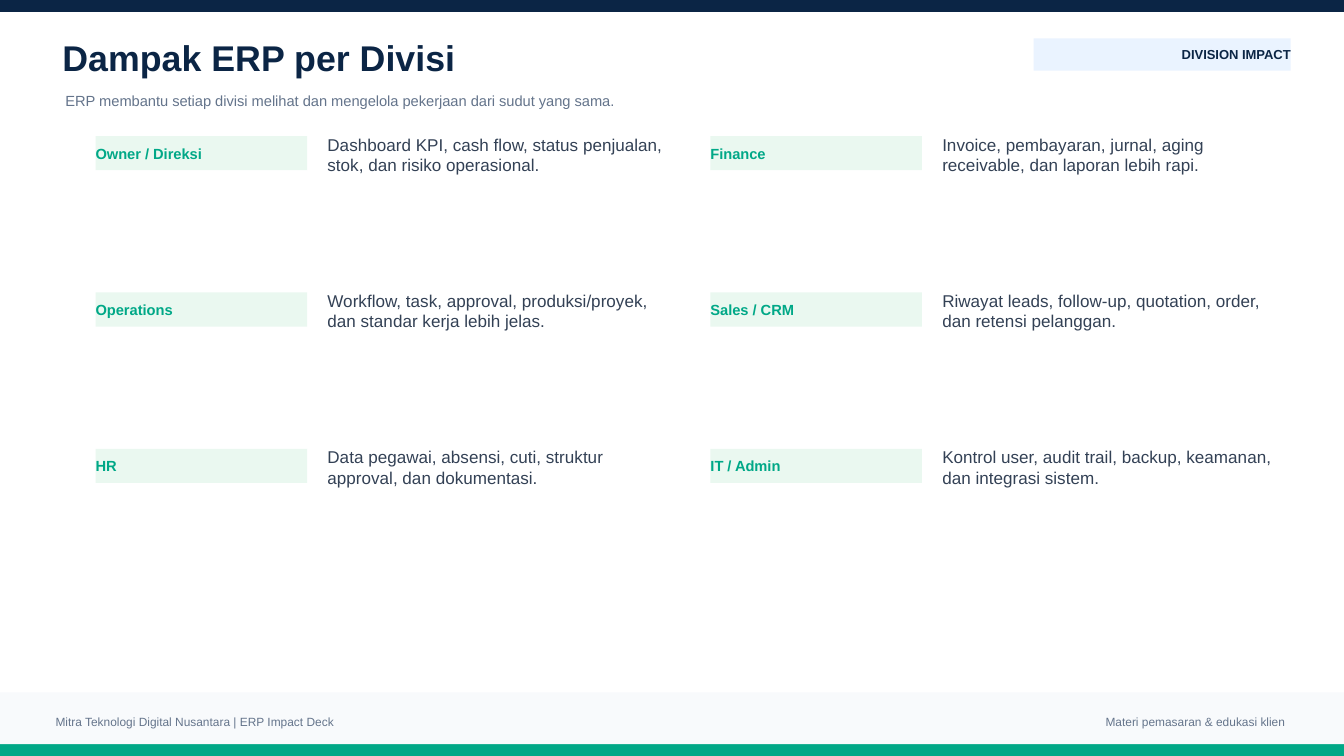
from pptx import Presentation
from pptx import util as u
from pptx.dml.color import RGBColor
from pptx.enum import shapes, text

NAVY = RGBColor(0x0B, 0x25, 0x45)
GREEN = RGBColor(0x00, 0xA8, 0x87)
MINT = RGBColor(0xEA, 0xF8, 0xF0)
SKY = RGBColor(0xEA, 0xF3, 0xFF)
MIST = RGBColor(0xF8, 0xFA, 0xFC)
SLATE = RGBColor(0x64, 0x74, 0x8B)
INK = RGBColor(0x33, 0x41, 0x55)

LEFT, RIGHT = text.PP_ALIGN.LEFT, text.PP_ALIGN.RIGHT
TOP, MIDDLE = text.MSO_ANCHOR.TOP, text.MSO_ANCHOR.MIDDLE

WIDTH, HEIGHT = 33.86, 19.05

DIVISIONS = [
    ("Owner / Direksi", "Dashboard KPI, cash flow, status penjualan, stok, dan risiko operasional."),
    ("Finance", "Invoice, pembayaran, jurnal, aging receivable, dan laporan lebih rapi."),
    ("Operations", "Workflow, task, approval, produksi/proyek, dan standar kerja lebih jelas."),
    ("Sales / CRM", "Riwayat leads, follow-up, quotation, order, dan retensi pelanggan."),
    ("HR", "Data pegawai, absensi, cuti, struktur approval, dan dokumentasi."),
    ("IT / Admin", "Kontrol user, audit trail, backup, keamanan, dan integrasi sistem."),
]


class DivisionPage:
    """Holds the type style and the slide being built; places are in cm."""

    font_name = "Arial"

    def __init__(self, deck):
        self.page = deck.slides.add_slide(deck.slide_layouts[5])

    def set_wording(self, box, wording, size, color, bold=False, align=LEFT, anchor=MIDDLE):
        frame = box.text_frame
        frame.text = wording
        frame_format = {
            "margin_left": 0, "margin_top": 0, "margin_right": 0, "margin_bottom": 0,
            "word_wrap": True, "auto_size": text.MSO_AUTO_SIZE.NONE,
            "vertical_anchor": anchor,
        }
        for name, value in frame_format.items():
            setattr(frame, name, value)
        para = frame.paragraphs[0]
        para.alignment = align
        font_format = {"name": self.font_name, "size": u.Pt(size), "bold": bold}
        for name, value in font_format.items():
            setattr(para.font, name, value)
        para.font.color.rgb = color

    def title(self, place, wording, **style):
        box = self.page.shapes.title
        for name, value in zip(("left", "top", "width", "height"), place):
            setattr(box, name, u.Cm(value))
        self.set_wording(box, wording, **style)

    def label(self, place, wording, **style):
        box = self.page.shapes.add_textbox(*map(u.Cm, place))
        self.set_wording(box, wording, **style)

    def panel(self, place, fill, wording="", **style):
        box = self.page.shapes.add_shape(shapes.MSO_SHAPE.RECTANGLE, *map(u.Cm, place))
        box.shadow.inherit = False
        box.fill.solid()
        box.fill.fore_color.rgb = fill
        box.line.fill.background()
        if wording:
            self.set_wording(box, wording, **style)


def main():
    deck = Presentation()
    deck.slide_width, deck.slide_height = u.Cm(WIDTH), u.Cm(HEIGHT)
    page = DivisionPage(deck)

    # Top band, bottom band and footer strip
    page.panel((0, 0, WIDTH, 0.3), NAVY)
    page.panel((0, 18.75, WIDTH, 0.3), GREEN)
    page.panel((0, 17.45, WIDTH, 1.3), MIST)

    # Footer
    footer = {"size": 8.5, "color": SLATE}
    page.label((1.4, 17.96, 14.22, 0.46),
               "Mitra Teknologi Digital Nusantara | ERP Impact Deck", **footer)
    page.label((21.46, 17.96, 10.92, 0.46),
               "Materi pemasaran & edukasi klien", align=RIGHT, **footer)

    # Heading
    page.title((1.57, 0.91, 23.88, 1.07), "Dampak ERP per Divisi",
               size=25.5, color=NAVY, bold=True)
    page.label((1.65, 2.18, 25.91, 0.71),
               "ERP membantu setiap divisi melihat dan mengelola pekerjaan dari sudut yang sama.",
               size=10.5, color=SLATE)
    page.panel((26.04, 0.97, 6.48, 0.81), SKY, "DIVISION IMPACT",
               size=9.3, color=NAVY, bold=True, align=RIGHT)

    # Divisions in two columns
    for index, (division, impact) in enumerate(DIVISIONS):
        row, column = divmod(index, 2)
        left, top = 2.41 + 15.49 * column, 3.43 + 3.94 * row
        page.panel((left, top, 5.33, 0.86), MINT, division,
                   size=10.5, color=GREEN, bold=True)
        page.label((left + 5.84, top - 0.05, 8.51, 1.83), impact,
                   size=12.2, color=INK, anchor=TOP)

    deck.save("out.pptx")


if __name__ == "__main__":
    main()
